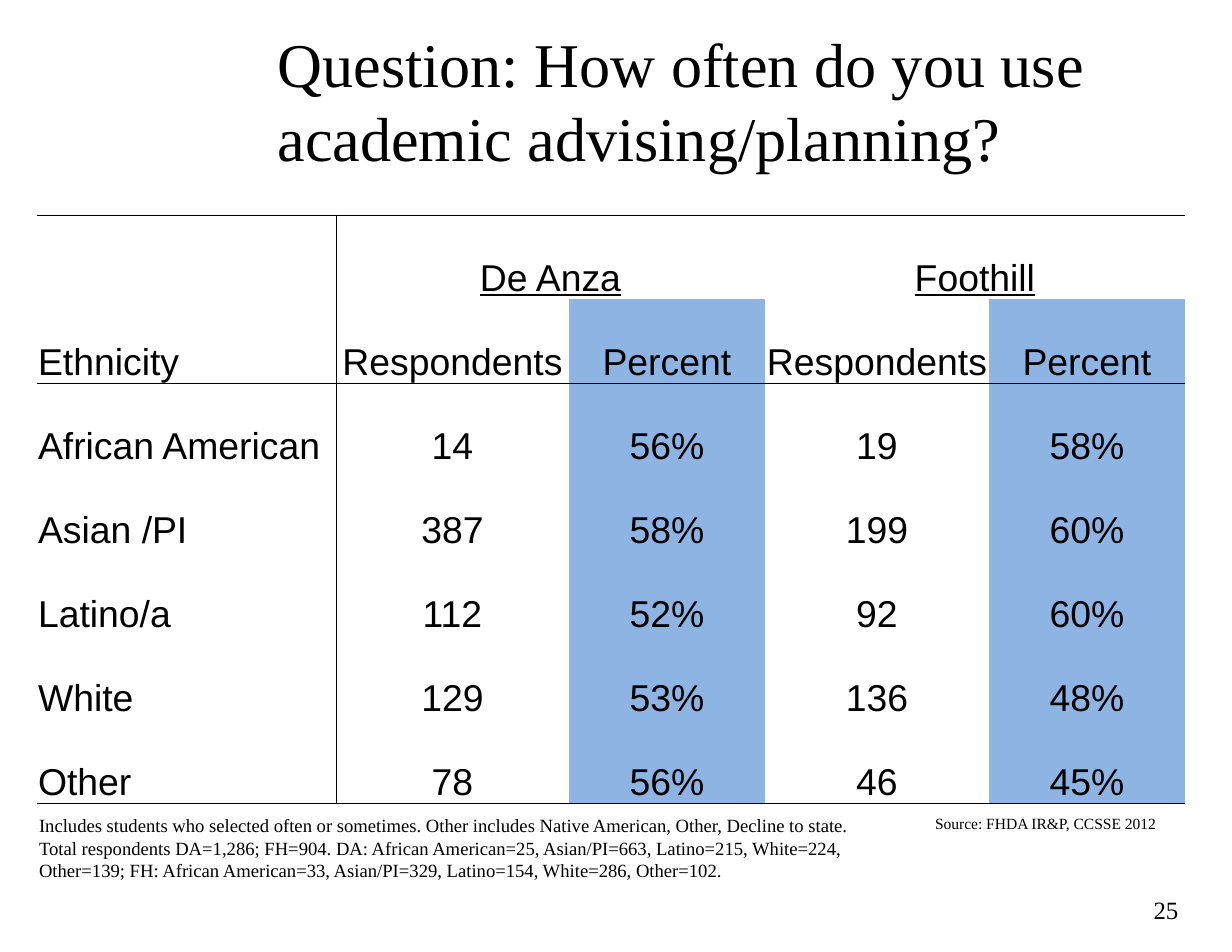
from pptx import Presentation
from pptx.dml.color import RGBColor
from pptx.enum.text import MSO_ANCHOR, PP_ALIGN
from pptx.oxml.ns import qn
from pptx.util import Inches, Pt
from lxml import etree

LEFT, CENTER, RIGHT = PP_ALIGN.LEFT, PP_ALIGN.CENTER, PP_ALIGN.RIGHT
TOP, MIDDLE, BOTTOM = MSO_ANCHOR.TOP, MSO_ANCHOR.MIDDLE, MSO_ANCHOR.BOTTOM

BLACK, BLUE = "000000", "8DB4E3"
SERIF, SANS = "Times New Roman", "Arial"

COLUMN_WIDTHS = [2.67, 2.08, 1.75, 2, 1.75]
ROW_HEIGHT = 0.75
PERCENT_COLUMNS = (2, 4)
RULED_ROWS = (0, 2, 7)  # row boundaries with a horizontal rule
RULED_COLUMNS = (1,)    # column boundaries with a vertical rule

ROWS = [
    ["", "De Anza", "", "Foothill", ""],
    ["Ethnicity", "Respondents", "Percent", "Respondents", "Percent"],
    ["African American", "14", "56%", "19", "58%"],
    ["Asian /PI", "387", "58%", "199", "60%"],
    ["Latino/a", "112", "52%", "92", "60%"],
    ["White", "129", "53%", "136", "48%"],
    ["Other", "78", "56%", "46", "45%"],
]

FOOTNOTE = [
    "Includes students who selected often or sometimes. "
    "Other includes Native American, Other, Decline to state.",
    "Total respondents DA=1,286; FH=904. DA: African American=25, Asian/PI=663, "
    "Latino=215, White=224, Other=139; FH: African American=33, Asian/PI=329, "
    "Latino=154, White=286, Other=102.",
]


def color(hex_string):
    return RGBColor.from_string(hex_string)


def write(frame, lines, size=12, font=SERIF, ink=BLACK, align=LEFT, underline=False):
    for index, line in enumerate(lines):
        paragraph = frame.paragraphs[0] if index == 0 else frame.add_paragraph()
        paragraph.alignment = align
        run = paragraph.add_run()
        run.text = line
        run.font.size = Pt(size)
        run.font.name = font
        run.font.underline = underline
        run.font.color.rgb = color(ink)


def add_text(slide, left, top, width, height, lines, anchor=TOP, wrap=True, **text_format):
    box = slide.shapes.add_textbox(Inches(left), Inches(top), Inches(width), Inches(height))
    frame = box.text_frame
    frame.word_wrap = wrap
    frame.vertical_anchor = anchor
    write(frame, lines, **text_format)
    return frame


def set_borders(cell, row, column):
    ruled = {
        "a:lnL": column in RULED_COLUMNS,
        "a:lnR": column + 1 in RULED_COLUMNS,
        "a:lnT": row in RULED_ROWS,
        "a:lnB": row + 1 in RULED_ROWS,
    }
    properties = cell._tc.get_or_add_tcPr()
    for tag, visible in ruled.items():
        line = etree.SubElement(properties, qn(tag), w=str(Pt(0.5)))
        if visible:
            fill = etree.SubElement(line, qn("a:solidFill"))
            etree.SubElement(fill, qn("a:srgbClr"), val=BLACK)
        else:
            etree.SubElement(line, qn("a:noFill"))


def fill_cell(cell, text, row, column):
    cell.margin_left = cell.margin_right = cell.margin_top = Inches(0.01)
    cell.margin_bottom = 0
    cell.vertical_anchor = BOTTOM
    set_borders(cell, row, column)
    if row > 0 and column in PERCENT_COLUMNS:
        cell.fill.solid()
        cell.fill.fore_color.rgb = color(BLUE)
    else:
        cell.fill.background()
    if text:
        write(cell.text_frame, [text], size=24, font=SANS,
              align=CENTER if column else LEFT, underline=row == 0)


def add_usage_table(slide):
    frame = slide.shapes.add_table(
        len(ROWS), len(COLUMN_WIDTHS), Inches(0.33), Inches(1.92),
        Inches(sum(COLUMN_WIDTHS)), Inches(ROW_HEIGHT * len(ROWS)))
    table = frame.table
    table.first_row = table.horz_banding = False
    for column, width in zip(table.columns, COLUMN_WIDTHS):
        column.width = Inches(width)
    for row, texts in enumerate(ROWS):
        table.rows[row].height = Inches(ROW_HEIGHT)
        for column, text in enumerate(texts):
            fill_cell(table.cell(row, column), text, row, column)
    # Each college heading spans its two columns
    for column in (1, 3):
        table.cell(0, column).merge(table.cell(0, column + 1))


def main():
    presentation = Presentation()
    presentation.slide_width = Inches(11)
    presentation.slide_height = Inches(8.5)
    slide = presentation.slides.add_slide(presentation.slide_layouts[6])

    # Title
    add_text(slide, 2.38, 0.17, 8.62, 1.44,
             ["Question: How often do you use academic advising/planning?"],
             anchor=MIDDLE, size=40)

    # Results by ethnicity and college
    add_usage_table(slide)

    # Footnote, source and page number
    add_text(slide, 0.25, 7.22, 8.08, 0.71, FOOTNOTE)
    add_text(slide, 8.25, 7.22, 2.22, 0.27, ["Source: FHDA IR&P, CCSSE 2012"],
             wrap=False, size=10)
    page_number = add_text(slide, 8.34, 7.93, 2.29, 0.57, ["25"], size=16, align=RIGHT)
    page_number.margin_left = page_number.margin_right = Inches(0.11)
    page_number.margin_top = page_number.margin_bottom = Inches(0.06)

    presentation.save("out.pptx")


if __name__ == "__main__":
    main()
